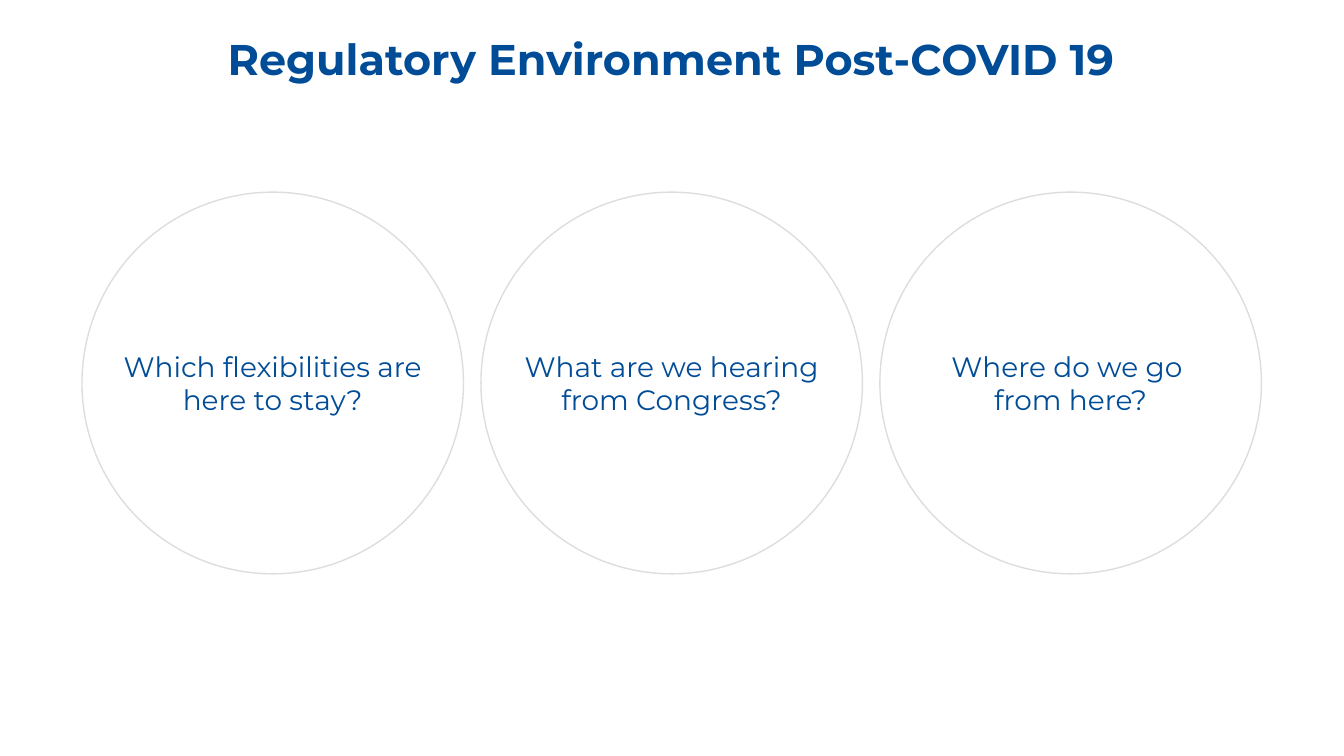
from pptx import Presentation
from pptx.dml.color import RGBColor
from pptx.enum.shapes import MSO_SHAPE
from pptx.enum.text import MSO_ANCHOR, PP_ALIGN
from pptx.util import Cm, Pt

OVAL = MSO_SHAPE.OVAL
CENTER = PP_ALIGN.CENTER
TOP, MIDDLE = MSO_ANCHOR.TOP, MSO_ANCHOR.MIDDLE

FONT = "Montserrat"
COLORS = {"blue": "004C97", "white": "FFFFFF", "outline": "DDDDDD"}

# Each question: its lines and the width of its text in cm
QUESTIONS = [
    (["Which flexibilities are here to stay?"], 5.92),
    (["What are we hearing from Congress?"], 5.92),
    (["Where do we go ", "from here?"], 6.68),
]


def color(name):
    return RGBColor.from_string(COLORS[name])


def add_text(slide, box, lines, size, bold=False, anchor=TOP, inset=0, spacing=None):
    """Place centred text in a box of (left, top, width, height) in cm."""
    text_frame = slide.shapes.add_textbox(*map(Cm, box)).text_frame
    text_frame.word_wrap = True
    text_frame.vertical_anchor = anchor
    text_frame.margin_left = text_frame.margin_right = Cm(inset)
    text_frame.margin_top = text_frame.margin_bottom = Cm(inset)
    paragraph = text_frame.paragraphs[0]
    paragraph.alignment = CENTER
    paragraph.line_spacing = spacing
    for index, line in enumerate(lines):
        if index:
            paragraph.add_line_break()
        run = paragraph.add_run()
        run.text = line
        run.font.name = FONT
        run.font.size = Pt(size)
        run.font.bold = bold
        run.font.color.rgb = color("blue")


def add_title(slide, box):
    add_text(slide, box, ["Regulatory Environment Post-COVID 19"], 23,
             bold=True, anchor=MIDDLE, inset=0.1, spacing=0.9)


def add_question_row(slide, box, gap=0.33):
    """Fill the box with equal circles, each holding one question."""
    left, top, width, diameter = box
    pitch = (width + gap) / len(QUESTIONS)
    for index, (lines, text_width) in enumerate(QUESTIONS):
        circle_left = left + index * pitch
        circle = slide.shapes.add_shape(
            OVAL, Cm(circle_left), Cm(top), Cm(diameter), Cm(diameter))
        circle.shadow.inherit = False
        circle.fill.solid()
        circle.fill.fore_color.rgb = color("white")
        circle.line.color.rgb = color("outline")
        circle.line.width = Pt(0.75)

        text_left = circle_left + (diameter - text_width) / 2
        add_text(slide, (text_left, top + 2.97, text_width, 1.25), lines, 15)


def main():
    presentation = Presentation()
    presentation.slide_width = Cm(25.4)
    presentation.slide_height = Cm(14.28)
    slide = presentation.slides.add_slide(presentation.slide_layouts[6])

    add_title(slide, (0.03, 0, 25.32, 2.34))
    add_question_row(slide, (1.55, 3.63, 22.29, 7.21))

    presentation.save("out.pptx")


if __name__ == "__main__":
    main()
